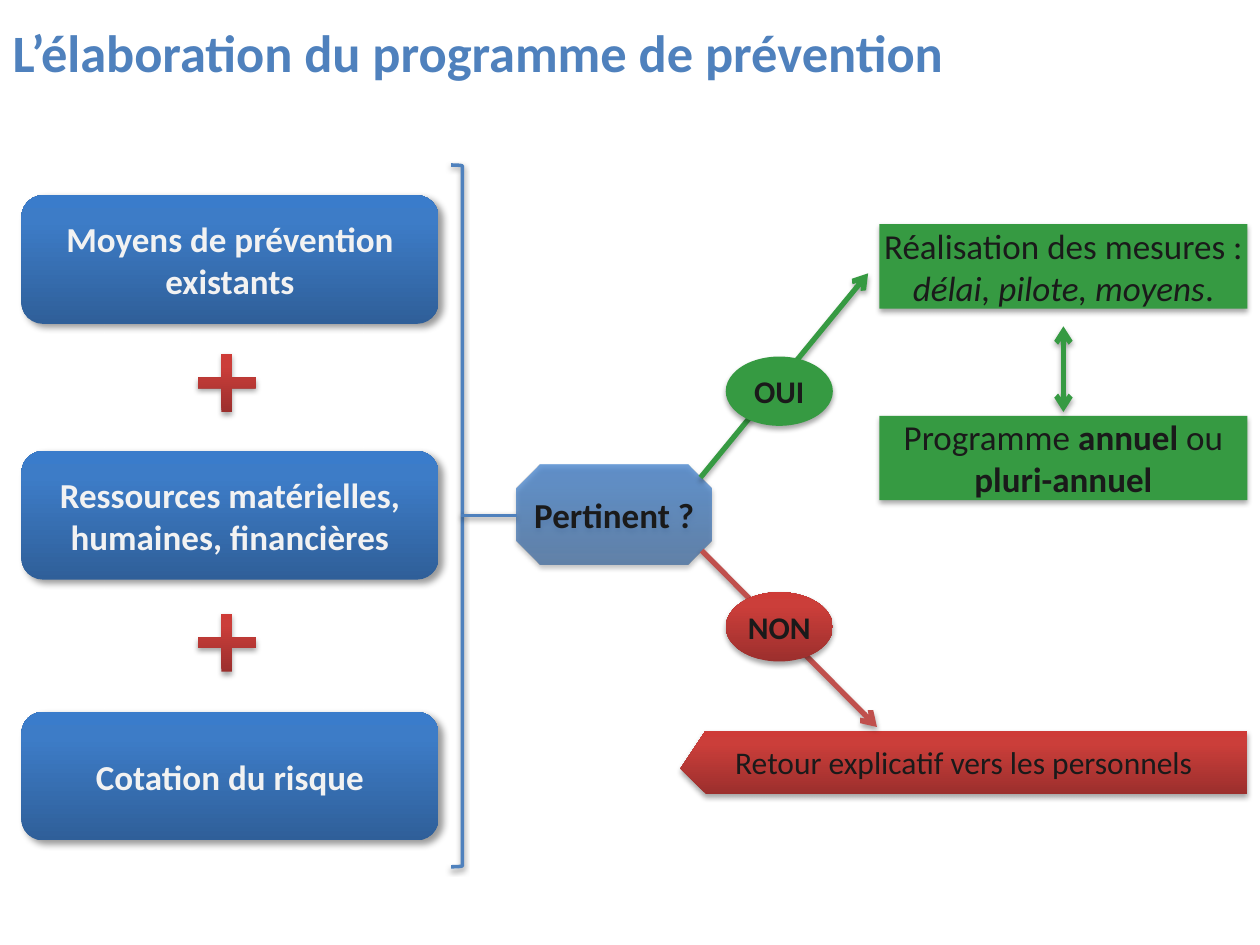
from dataclasses import dataclass

from lxml import etree
from pptx import Presentation, util as u
from pptx.dml.color import RGBColor
from pptx.enum import shapes as s, text as t
from pptx.oxml import parse_xml
from pptx.oxml.ns import nsdecls, qn

# The grid has 100 columns and 75 rows, each a tenth of an inch.
CELL = u.Inches(0.1)
FONT = "Calibri"
COLORS = {"accent": "4F81BD", "light": "F2F2F2", "dark": "1A1A1A",
          "yes": "369A42", "no": "C0504D", "shadow": "000000"}
BLUE = ((0, "2F5F99"), (80, "3D7CC7"), (100, "3A7CCB"))
RED = ((0, "9C2F2D"), (80, "CB3E3A"), (100, "CE3B37"))


@dataclass(frozen=True)
class Shadow:
    opacity: float
    blur: float
    distance: float
    angle: int = 90


CARD_SHADOW = Shadow(40, 4, 3, 45)
NODE_SHADOW = Shadow(35, 3.1, 1.8)
LINE_SHADOW = Shadow(38, 3.1, 1.6)


@dataclass(frozen=True)
class Span:
    text: str
    bold: bool = False
    italic: bool = False


@dataclass(frozen=True)
class Node:
    kind: s.MSO_SHAPE
    at: tuple[float, float, float, float]
    fill: str | tuple
    lines: tuple[tuple[Span, ...], ...] = ()
    size: int = 20
    color: str = "dark"
    anchor: t.MSO_ANCHOR = t.MSO_ANCHOR.MIDDLE
    inset: float = 0
    adjustments: tuple[float, ...] = ()
    opacities: tuple[int, ...] = (100, 100, 100)
    shadow: Shadow = NODE_SHADOW


@dataclass(frozen=True)
class Link:
    start: tuple[float, float]
    end: tuple[float, float]
    color: str
    width: float = 3
    heads: tuple[str, ...] = ("tailEnd",)
    shadow: Shadow = NODE_SHADOW


def cells(*values: float) -> list[int]:
    return [round(value * CELL) for value in values]


def rgb(name: str) -> RGBColor:
    return RGBColor.from_string(COLORS[name])


def set_all(target, values: dict) -> None:
    for name, value in values.items():
        setattr(target, name, value)


def add_shadow(item, shadow: Shadow) -> None:
    """Call after the fill and line are set, as effects follow them in the XML."""
    item._element.spPr.append(parse_xml(
        f'<a:effectLst {nsdecls("a")}><a:outerShdw blurRad="{u.Pt(shadow.blur)}" '
        f'dist="{u.Pt(shadow.distance)}" dir="{shadow.angle * 60000}" rotWithShape="0">'
        f'<a:srgbClr val="{COLORS["shadow"]}"><a:alpha val="{shadow.opacity * 1000}"/>'
        '</a:srgbClr></a:outerShdw></a:effectLst>'))


def paint(shape, fill: str | tuple, opacities: tuple[int, ...]) -> None:
    if isinstance(fill, str):
        shape.fill.solid()
        shape.fill.fore_color.rgb = rgb(fill)
        return
    stops = "".join(
        f'<a:gs pos="{place * 1000}"><a:srgbClr val="{color}">'
        f'<a:alpha val="{opacity * 1000}"/></a:srgbClr></a:gs>'
        for (place, color), opacity in zip(fill, opacities))
    shape.fill.background()
    properties = shape._element.spPr
    properties.replace(properties.find(qn("a:noFill")), parse_xml(
        f'<a:gradFill {nsdecls("a")} rotWithShape="1"><a:gsLst>{stops}</a:gsLst>'
        '<a:lin ang="16200000" scaled="0"/></a:gradFill>'))


def write(frame, node: Node) -> None:
    set_all(frame, {"word_wrap": True, "vertical_anchor": node.anchor,
                    "margin_left": 0, "margin_right": 0,
                    "margin_top": u.Inches(node.inset),
                    "margin_bottom": u.Inches(node.inset)})
    for index, line in enumerate(node.lines):
        para = frame.add_paragraph() if index else frame.paragraphs[0]
        para.alignment = t.PP_ALIGN.CENTER
        for span in line:
            run = para.add_run()
            run.text = span.text
            set_all(run.font, {"name": FONT, "size": u.Pt(node.size),
                               "bold": span.bold, "italic": span.italic})
            run.font.color.rgb = rgb(node.color)


def finish(shape, node: Node) -> None:
    paint(shape, node.fill, node.opacities)
    shape.line.fill.background()
    add_shadow(shape, node.shadow)
    write(shape.text_frame, node)


def add_node(page, node: Node) -> None:
    shape = page.shapes.add_shape(node.kind, *cells(*node.at))
    for index, value in enumerate(node.adjustments):
        shape.adjustments[index] = value
    finish(shape, node)


def add_banner(page, node: Node) -> None:
    """Draw a bar whose left end is a point."""
    left, top, width, height = node.at
    right, bottom, shoulder = left + width, top + height, left + 1.7
    builder = page.shapes.build_freeform(shoulder, top, scale=CELL)
    builder.add_line_segments([(right, top), (right, bottom), (shoulder, bottom),
                               (left, top + height / 2)], close=True)
    finish(builder.convert_to_shape(), node)


def add_link(page, link: Link) -> None:
    line = page.shapes.add_connector(s.MSO_CONNECTOR.STRAIGHT,
                                     *cells(*link.start, *link.end))
    line.line.color.rgb = rgb(link.color)
    line.line.width = u.Pt(link.width)
    for head in link.heads:
        etree.SubElement(line.line._get_or_add_ln(), qn(f"a:{head}"), type="arrow")
    add_shadow(line, link.shadow)


def add_bracket(page) -> None:
    bracket = page.shapes.add_shape(s.MSO_SHAPE.RIGHT_BRACKET,
                                    *cells(35.8, 13.1, 0.9, 55.7))
    bracket.fill.background()
    bracket.line.color.rgb = rgb("accent")
    bracket.line.width = u.Pt(2)
    add_shadow(bracket, LINE_SHADOW)


def add_title(page, text: str) -> None:
    title = page.shapes.title
    set_all(title, dict(zip(("left", "top", "width", "height"), cells(0, 1.5, 90, 5.6))))
    title.text_frame.text = text
    title.text_frame.vertical_anchor = t.MSO_ANCHOR.MIDDLE
    para = title.text_frame.paragraphs[0]
    set_all(para, {"alignment": t.PP_ALIGN.LEFT, "line_spacing": u.Pt(33)})
    span = para.runs[0]
    set_all(span.font, {"name": FONT, "size": u.Pt(30), "bold": True})
    span.font.color.rgb = rgb("accent")


def main() -> None:
    deck = Presentation()
    set_all(deck, {"slide_width": 100 * CELL, "slide_height": 75 * CELL})
    page = deck.slides.add_slide(deck.slide_layouts[5])
    add_title(page, "L’élaboration du programme de prévention")

    cards = ((15.5, "Moyens de prévention existants"),
             (35.8, "Ressources matérielles, humaines, financières"),
             (56.5, "Cotation du risque"))
    for top, label in cards:
        add_node(page, Node(s.MSO_SHAPE.ROUNDED_RECTANGLE, (1.7, top, 33.1, 10.2), BLUE,
                            ((Span(label, bold=True),),), color="light",
                            inset=0.05, shadow=CARD_SHADOW))
    for top in (28.1, 48.7):
        add_node(page, Node(s.MSO_SHAPE.CROSS, (15.7, top, 4.6, 4.6), RED,
                            adjustments=(0.41,)))
    add_bracket(page)

    add_node(page, Node(s.MSO_SHAPE.SNIP_2_DIAG_RECTANGLE, (41, 36.9, 15.5, 7.9), BLUE,
                        ((Span("Pertinent ?", bold=True),),),
                        adjustments=(0.24, 0.24), opacities=(66, 72, 72)))
    actions = (
        (17.8, ((Span("Réalisation des mesures :"),),
                (Span("délai, pilote, moyens", italic=True), Span(".")))),
        (33, ((Span("Programme "), Span("annuel", bold=True), Span(" ou "),
               Span("pluri-annuel", bold=True)),)))
    for top, lines in actions:
        add_node(page, Node(s.MSO_SHAPE.RECTANGLE, (69.8, top, 29.2, 6.7), "yes", lines,
                            anchor=t.MSO_ANCHOR.TOP))
    add_banner(page, Node(s.MSO_SHAPE.PENTAGON, (53.8, 58.5, 45.2, 4.2), RED,
                          ((Span("Retour explicatif vers les personnels"),),), size=18))

    for link in (Link((36.6, 40.9), (41, 40.9), "accent", 2, (), LINE_SHADOW),
                 Link((55.7, 43.7), (69.6, 57.7), "no"),
                 Link((55.6, 37.9), (68.9, 21.7), "yes"),
                 Link((84.4, 25.9), (84.4, 32.7), "yes", heads=("headEnd", "tailEnd"))):
        add_link(page, link)
    for top, label, fill in ((28.3, "OUI", "yes"), (47, "NON", RED)):
        add_node(page, Node(s.MSO_SHAPE.OVAL, (57.6, top, 8.5, 5.5), fill,
                            ((Span(label, bold=True),),), size=18))
    deck.save("out.pptx")


if __name__ == "__main__":
    main()
